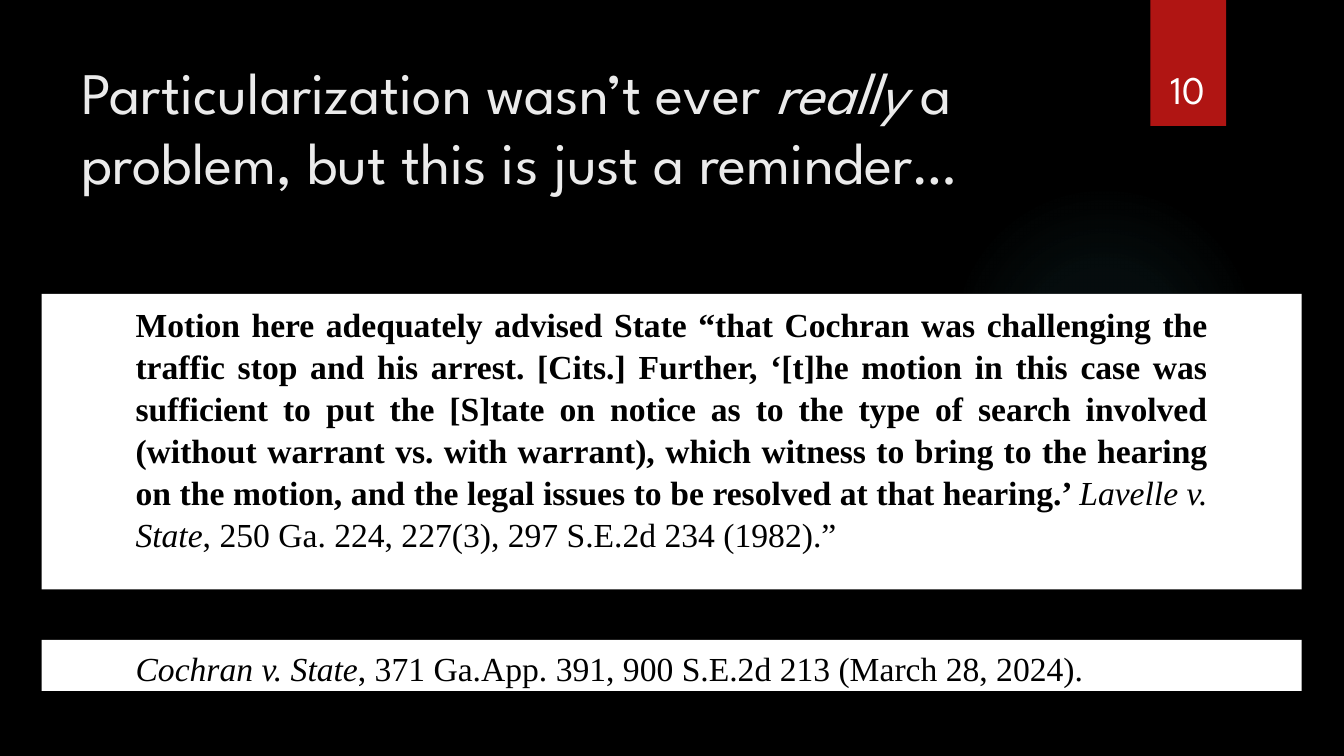
import pptx
import pptx.dml.color
import pptx.enum.shapes
import pptx.enum.text
import pptx.oxml
import pptx.oxml.ns
import pptx.util

Pt = pptx.util.Pt
RGBColor = pptx.dml.color.RGBColor
SHAPE = pptx.enum.shapes.MSO_SHAPE
ANCHOR = pptx.enum.text.MSO_ANCHOR
ALIGN = pptx.enum.text.PP_ALIGN

BLACK = RGBColor(0x00, 0x00, 0x00)
WHITE = RGBColor(0xFF, 0xFF, 0xFF)
OFF_WHITE = RGBColor(0xEB, 0xEB, 0xEB)
RED = RGBColor(0xB0, 0x15, 0x13)
TEAL = RGBColor(0x50, 0xB9, 0xC1)

HEADING_FONT = "League Spartan"
BODY_FONT = "Times New Roman"
NAMESPACE = pptx.oxml.ns.nsdecls("a")
BOLD, ITALIC, PLAIN = "bold", "italic", "plain"


def add_box(slide, kind, box, color):
    shape = slide.shapes.add_shape(kind, *map(Pt, box))
    shape.shadow.inherit = False
    shape.line.fill.background()
    shape.fill.solid()
    shape.fill.fore_color.rgb = color
    return shape


def write_runs(shape, runs, font, size, color, align, anchor):
    """Fill a shape with one paragraph of (text, style) runs."""
    frame = shape.text_frame
    frame.word_wrap = True
    frame.vertical_anchor = anchor
    paragraph = frame.paragraphs[0]
    paragraph.alignment = align
    for text, style in runs:
        run = paragraph.add_run()
        run.text = text
        run.font.name = font
        run.font.size = Pt(size)
        run.font.color.rgb = color
        run.font.bold = style == BOLD
        run.font.italic = style == ITALIC
    return paragraph


def add_glow(slide, box):
    glow = add_box(slide, SHAPE.OVAL, box, TEAL)
    # Radial fade from faint teal to transparent
    stops = "".join(
        f'<a:gs pos="{position * 1000}"><a:srgbClr val="{TEAL}">'
        f'<a:alpha val="{alpha * 1000}"/></a:srgbClr></a:gs>'
        for position, alpha in ((0, 7), (36, 6), (69, 0)))
    gradient = pptx.oxml.parse_xml(
        f'<a:gradFill {NAMESPACE}><a:gsLst>{stops}</a:gsLst><a:path path="circle">'
        '<a:fillToRect l="50000" t="50000" r="50000" b="50000"/></a:path></a:gradFill>')
    properties = glow.element.spPr
    properties.replace(properties.find(pptx.oxml.ns.qn("a:solidFill")), gradient)


def add_number_tab(slide, box, number):
    left, top, width, height = box
    tab = add_box(slide, SHAPE.RECTANGLE, box, RED)
    # Soft shadow below the tab
    effects = tab.element.spPr.find(pptx.oxml.ns.qn("a:effectLst"))
    effects.append(pptx.oxml.parse_xml(
        f'<a:outerShdw {NAMESPACE} blurRad="{Pt(3)}" dist="{Pt(2)}" dir="5400000">'
        '<a:srgbClr val="000000"><a:alpha val="45000"/></a:srgbClr></a:outerShdw>'))
    label = slide.shapes.add_textbox(
        Pt(left - 6.5), Pt(top + 23), Pt(width + 12.5), Pt(height - 29.5))
    write_runs(label, [(number, PLAIN)], HEADING_FONT, 28, WHITE,
               ALIGN.CENTER, ANCHOR.BOTTOM)


def add_title(slide, box, runs):
    title = slide.shapes.add_textbox(*map(Pt, box))
    write_runs(title, runs, HEADING_FONT, 42, OFF_WHITE, ALIGN.LEFT, ANCHOR.TOP)


def add_quote_panel(slide, box, runs, anchor):
    panel = add_box(slide, SHAPE.RECTANGLE, box, WHITE)
    paragraph = write_runs(panel, runs, BODY_FONT, 24, BLACK, ALIGN.JUSTIFY, anchor)
    paragraph.line_spacing = 1.04
    panel.text_frame.margin_top = Pt(6)
    # Equal indents on both sides
    properties = paragraph._p.get_or_add_pPr()
    for side in ("marL", "marR"):
        properties.set(side, str(Pt(60)))


def main():
    presentation = pptx.Presentation()
    presentation.slide_width, presentation.slide_height = Pt(960), Pt(540)
    slide = presentation.slides.add_slide(presentation.slide_layouts[6])
    slide.background.fill.solid()
    slide.background.fill.fore_color.rgb = BLACK

    add_glow(slide, (677.5, 131.75, 221.75, 221.75))
    add_title(slide, (51, 36, 741, 110), [
        ("Particularization wasn’t ever ", PLAIN),
        ("really", ITALIC),
        (" a problem, but this is just a reminder…", PLAIN)])

    # Quotation and its citation
    add_quote_panel(slide, (29.75, 210, 900, 211), [
        ("Motion here adequately advised State “that Cochran was challenging the "
         "traffic stop and his arrest. [Cits.] Further, ‘[t]he motion in this case "
         "was sufficient to put the [S]tate on notice as to the type of search "
         "involved (without warrant vs. with warrant), which witness to bring to "
         "the hearing on the motion, and the legal issues to be resolved at that "
         "hearing.’ ", BOLD),
        ("Lavelle v. State", ITALIC),
        (", 250 Ga. 224, 227(3), 297 S.E.2d 234 (1982).”", PLAIN)], ANCHOR.TOP)
    add_quote_panel(slide, (29.75, 457, 900, 36.5), [
        ("Cochran v. State", ITALIC),
        (", 371 Ga.App. 391, 900 S.E.2d 213 (March 28, 2024).", PLAIN)], ANCHOR.MIDDLE)

    add_number_tab(slide, (821.75, 0, 54, 90), "10")
    presentation.save("out.pptx")


if __name__ == "__main__":
    main()
